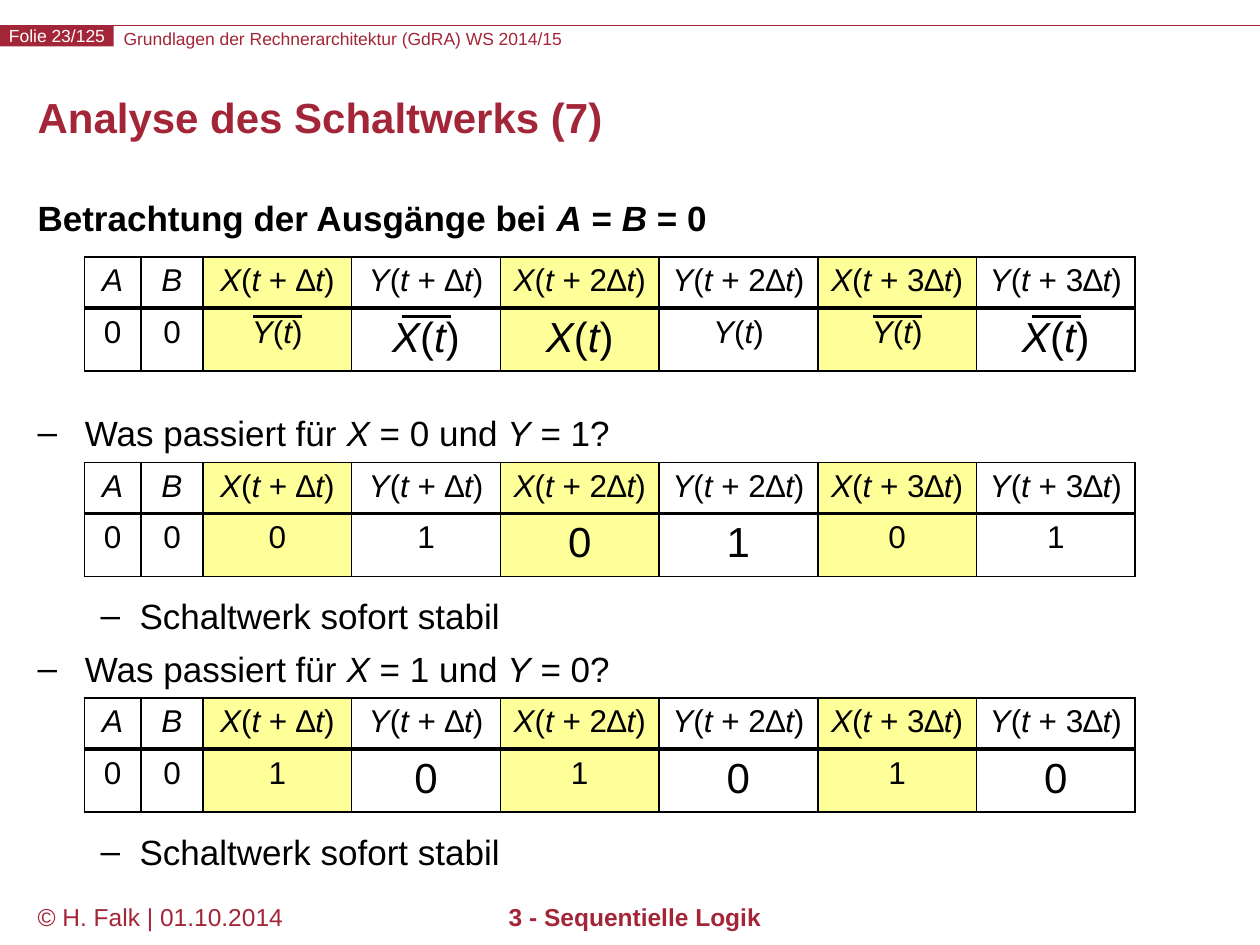
from itertools import accumulate

from lxml import etree
from pptx import Presentation
from pptx.dml.color import RGBColor
from pptx.enum.shapes import MSO_CONNECTOR, MSO_SHAPE
from pptx.enum.text import MSO_ANCHOR, PP_ALIGN
from pptx.oxml.ns import qn
from pptx.util import Pt

LEFT, MID = PP_ALIGN.LEFT, PP_ALIGN.CENTER
TOP, CENTER = MSO_ANCHOR.TOP, MSO_ANCHOR.MIDDLE
STRAIGHT = MSO_CONNECTOR.STRAIGHT
RECT = MSO_SHAPE.RECTANGLE

RED, BLACK, WHITE, YELLOW = "A32638", "000000", "FFFFFF", "FFFF9A"
FONT = "Arial"
COLS = [32.4, 35.4, 85, 85, 90.7, 90.7, 90.7, 90.7]
ROW = 29.2
HEAD = ["*A*", "*B*"] + [
    f"*{name}*(*t* + {step}∆*t*)" for step in ("", "2", "3") for name in "XY"
]


def color(value):
    return RGBColor.from_string(value)


def write(para, text, size, tint=BLACK, bold=False, align=LEFT):
    """Fill a paragraph; parts between asterisks are italic."""
    para.alignment = align
    font = para.font
    font.name, font.size, font.bold = FONT, Pt(size), bold
    font.color.rgb = color(tint)
    for i, part in enumerate(text.split("*")):
        if part:
            run = para.add_run()
            run.text = part
            if i % 2:
                run.font.italic = True


def add_box(slide, box, anchor=TOP, inset=True):
    frame = slide.shapes.add_textbox(*map(Pt, box)).text_frame
    frame.word_wrap = True
    frame.vertical_anchor = anchor
    if not inset:
        clear_inset(frame)
    return frame


def clear_inset(frame):
    frame.margin_left = frame.margin_right = 0
    frame.margin_top = frame.margin_bottom = 0


def add_line(slide, x, y, width, tint, weight):
    line = slide.shapes.add_connector(STRAIGHT, Pt(x), Pt(y), Pt(x + width), Pt(y))
    line.line.color.rgb = color(tint)
    line.line.width = Pt(weight)
    etree.SubElement(line._element.spPr, qn("a:effectLst"))


def add_header(slide, box):
    x, y, width, height = box
    add_line(slide, x, y, width, RED, 0.75)
    frame = add_box(slide, (x + 70.6, y + 1.4, 475, height), inset=False)
    write(frame.paragraphs[0],
          "Grundlagen der Rechnerarchitektur (GdRA) WS 2014/15", 10, RED)

    # Slide number tag
    tag = slide.shapes.add_shape(RECT, Pt(x), Pt(y), Pt(65), Pt(height))
    tag.shadow.inherit = False
    tag.fill.solid()
    tag.fill.fore_color.rgb = color(RED)
    tag.line.fill.background()
    frame = tag.text_frame
    clear_inset(frame)
    frame.word_wrap = False
    write(frame.paragraphs[0], "Folie 23/125", 10, WHITE, align=MID)


def add_footer(slide, box):
    x, y, width, height = box
    date = add_box(slide, (x, y, 158.4, height))
    write(date.paragraphs[0], "© H. Falk | 01.10.2014", 14, RED)
    topic = add_box(slide, (x + 130.3, y, 436.3, height))
    write(topic.paragraphs[0], "3 - Sequentielle Logik", 14, RED, True, MID)


def add_title(slide, box):
    para = add_box(slide, box, CENTER).paragraphs[0]
    para.line_spacing = Pt(24)
    write(para, "Analyse des Schaltwerks (7)", 24, RED, True)


def add_dash(para, left, hang):
    props = para._p.get_or_add_pPr()
    props.set("marL", str(Pt(left)))
    props.set("indent", str(-Pt(hang)))
    etree.SubElement(props, qn("a:buFont")).set("typeface", FONT)
    etree.SubElement(props, qn("a:buChar")).set("char", "–")


def add_body(slide, box):
    frame = add_box(slide, box)
    first = frame.paragraphs[0]
    first.line_spacing = 0.9
    write(first, "Betrachtung der Ausgänge bei *A* = *B* = 0", 20, bold=True)

    # Questions and answers, spaced to leave room for the tables
    outer, inner = (27, 27), (58.3, 22.3)
    for text, dash, gap in (
        ("Was passiert für *X* = 0 und *Y* = 1?", outer, 93.5),
        ("Schaltwerk sofort stabil", inner, 75.8),
        ("Was passiert für *X* = 1 und *Y* = 0?", outer, 1.8),
        ("Schaltwerk sofort stabil", inner, 75.8),
    ):
        para = frame.add_paragraph()
        add_dash(para, *dash)
        para.line_spacing = 1.2
        para.space_before = Pt(gap)
        write(para, text, 20)


def set_border(cell, top, bottom):
    props = cell._tc.get_or_add_tcPr()
    for side, weight in zip("LRTB", (1, 1, top, bottom)):
        line = etree.SubElement(props, qn(f"a:ln{side}"), w=str(Pt(weight)))
        fill = etree.SubElement(line, qn("a:solidFill"))
        etree.SubElement(fill, qn("a:srgbClr"), val=BLACK)


def add_states(slide, x, y, values, large, barred=()):
    """State table; large and barred name the columns set so in row two."""
    table = slide.shapes.add_table(
        2, len(COLS), Pt(x), Pt(y), Pt(sum(COLS)), Pt(2 * ROW)).table
    table.first_row = table.horz_banding = False
    for col, width in zip(table.columns, COLS):
        col.width = Pt(width)
    for r, texts in enumerate((HEAD, ["0", "0", *values])):
        table.rows[r].height = Pt(ROW)
        for c, text in enumerate(texts):
            cell = table.cell(r, c)
            set_border(cell, *((2.25, 1) if r else (1, 2.25)))
            if c in (2, 4, 6):
                cell.fill.solid()
                cell.fill.fore_color.rgb = color(YELLOW)
            else:
                cell.fill.background()
            size = 24 if r and c in large else 18
            write(cell.text_frame.paragraphs[0], text, size, align=MID)

    # Negation bars
    ends = list(accumulate(COLS))
    for c in barred:
        mid = x + ends[c] - COLS[c] / 2
        add_line(slide, mid - 14, y + 33.8, 28, BLACK, 1.5)


def main():
    deck = Presentation()
    deck.slide_width, deck.slide_height = Pt(720), Pt(540)
    slide = deck.slides.add_slide(deck.slide_layouts[6])
    add_header(slide, (0, 14.4, 720, 12.2))
    add_footer(slide, (14.4, 512, 691, 28))
    add_title(slide, (14.4, 43.2, 692, 51.8))
    add_body(slide, (14.4, 111.6, 692, 393))

    x, y = "*X*(*t*)", "*Y*(*t*)"
    add_states(slide, 48.2, 146.9, [y, x, x, y, y, x], (3, 4, 7), (2, 3, 6, 7))
    add_states(slide, 48.2, 264.2, "010101", (4, 5))
    add_states(slide, 48.2, 398.9, "101010", (3, 5, 7))
    deck.save("out.pptx")


if __name__ == "__main__":
    main()
